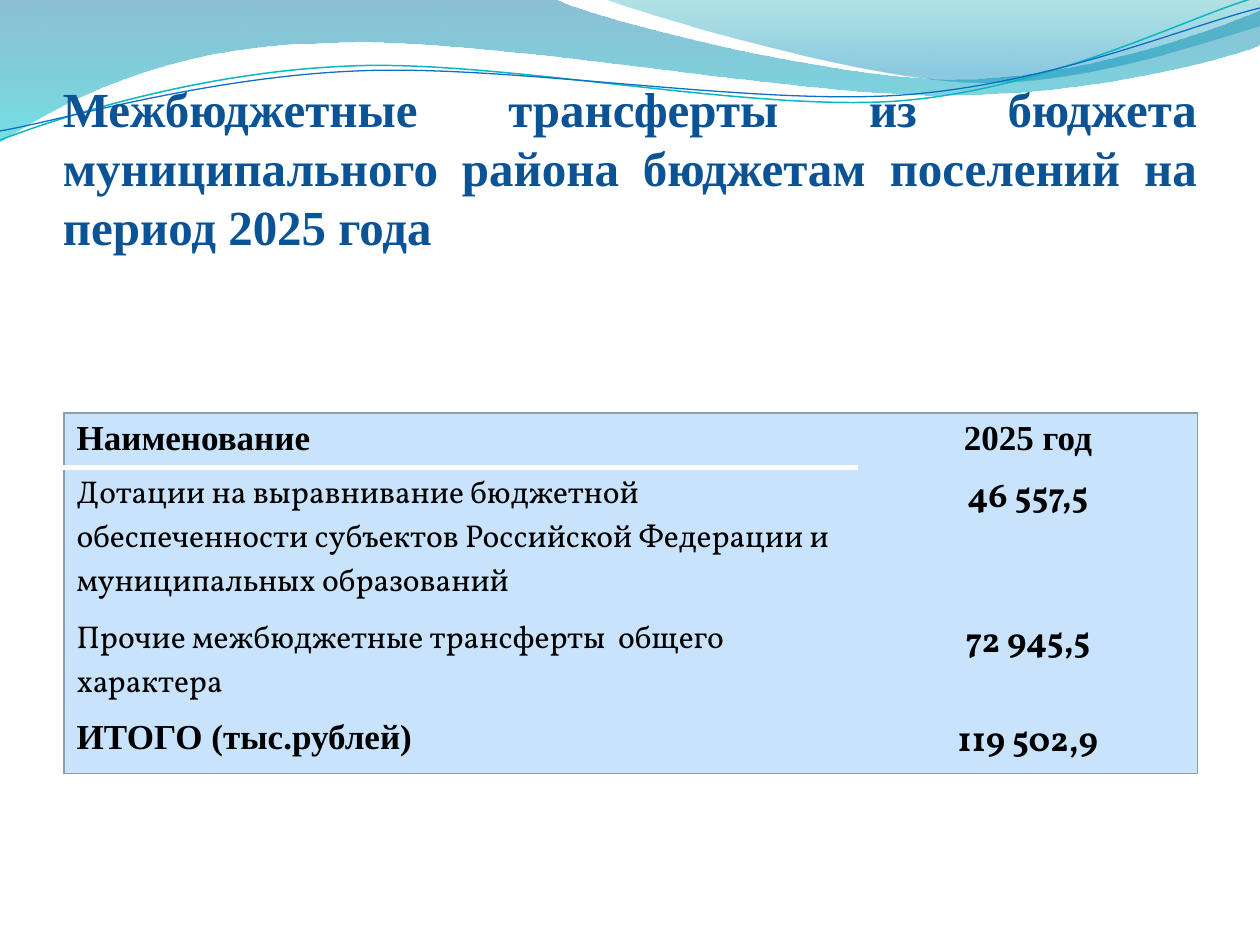
from lxml import etree
from pptx import Presentation
from pptx import util as u
from pptx.dml.color import RGBColor
from pptx.enum import text
from pptx.oxml.ns import qn

PX = 914400 // 126
NAVY = RGBColor(0x0B, 0x53, 0x94)
BLACK = RGBColor(0, 0, 0)
WHITE = RGBColor(255, 255, 255)
PALE_BLUE = RGBColor(0xC8, 0xE3, 0xFB)
GREY_BLUE = RGBColor(0x8B, 0x9E, 0xB0)
TEAL = RGBColor(0x0A, 0xB8, 0xBF)
BLUE = RGBColor(0x0F, 0x6F, 0xC6)
OCEAN = RGBColor(0, 0x74, 0xA1)
AQUA = RGBColor(0, 0xC6, 0xCF)
SEA = RGBColor(0, 0xA1, 0xA9)
SKY = RGBColor(0, 0x8B, 0xBF)
SERIF, VOLLKORN = "Times New Roman", "Vollkorn"

TITLE = "Межбюджетные трансферты из бюджета муниципального района бюджетам поселений на период 2025 года"
ROWS = [
    (51, ("Наименование", SERIF, 20, True), ("2025 год", SERIF, 20, True)),
    (145, ("Дотации на выравнивание бюджетной обеспеченности субъектов Российской Федерации и муниципальных образований",
           VOLLKORN, 18, False), ("46 557,5", VOLLKORN, 20, True)),
    (99, ("Прочие межбюджетные трансферты  общего характера", VOLLKORN, 18, False),
     ("72 945,5", VOLLKORN, 20, True)),
    (62, ("ИТОГО (тыс.рублей)", SERIF, 20, True), ("119 502,9", VOLLKORN, 20, True)),
]
COLUMNS = [794, 340]

# Each wave: start point, then segments of one point (line) or three (curve).
WAVES = [
    ((0, 0), [[(554, -1)], [(600, 21), (837, 79), (955, 79)], [(1075, 79), (1207, 33), (1260, 11)],
              [(1261, 45)], [(1239, 55), (1096, 96), (940, 95)], [(784, 95), (481, 35), (324, 43)],
              [(163, 45), (58, 105), (-1, 142)], [(0, 0)]],
     [(0, OCEAN, 45), (1, AQUA, 55)]),
    ((604, -1), [[(641, 14), (859, 78), (969, 82)], [(1079, 87), (1211, 40), (1260, 26)],
                 [(1260, 0)], [(604, -1)]],
     [(0, SEA, 30), (0.8, SKY, 45)]),
]
STRANDS = [
    ((0, 140), [[(60, 117), (199, 72), (349, 66)], [(498, 59), (747, 112), (898, 101)],
                [(1050, 89), (1182, 19), (1257, -3)]], TEAL, 0.85),
    ((0, 131), [[(59, 121), (207, 77), (357, 71)], [(508, 64), (752, 106), (903, 95)],
                [(1053, 84), (1186, 26), (1260, 8)]], BLUE, 0.75),
]


def add_curve(slide, start, segments, closed):
    builder = slide.shapes.build_freeform(*start, scale=PX)
    builder.add_line_segments([point for segment in segments for point in segment], close=closed)
    curve = builder.convert_to_shape()
    curve.shadow.inherit = False
    lines = iter(list(curve._element.iter(qn("a:lnTo"))))
    for segment in segments:
        steps = [next(lines) for _ in segment]
        if len(steps) == 3:
            bezier = etree.Element(qn("a:cubicBezTo"))
            steps[0].addprevious(bezier)
            for step in steps:
                bezier.append(step[0])
                step.getparent().remove(step)
    return curve


def add_wave(slide, start, segments, stops):
    wave = add_curve(slide, start, segments, True)
    wave.line.fill.background()
    wave.fill.gradient()
    wave.fill.gradient_angle = 270
    for stop, (position, color, _) in zip(wave.fill.gradient_stops, stops):
        stop.position = position
        stop.color.rgb = color
    tints = wave._element.spPr.iter(qn("a:srgbClr"))
    for tint, (_, _, opacity) in zip(list(tints), stops):
        etree.SubElement(tint, qn("a:alpha"), val=str(opacity * 1000))


def add_strand(slide, start, segments, color, width):
    strand = add_curve(slide, start, segments, False)
    strand.fill.background()
    strand.line.color.rgb = color
    strand.line.width = u.Pt(width)


def style_text(paragraph, font, size, bold, color, align):
    paragraph.alignment = align
    for run in paragraph.runs:
        run.font.name = font
        run.font.size = u.Pt(size)
        run.font.bold = bold
        run.font.color.rgb = color


def set_borders(cell, edges):
    properties = cell._tc.get_or_add_tcPr()
    for index, side in enumerate("LRTB"):
        border = etree.Element(qn(f"a:ln{side}"))
        if side in edges:
            color, width = edges[side]
            border.set("w", str(u.Pt(width)))
            fill = etree.SubElement(border, qn("a:solidFill"))
            etree.SubElement(fill, qn("a:srgbClr"), val=str(color))
        else:
            etree.SubElement(border, qn("a:noFill"))
        properties.insert(index, border)


def add_title(slide):
    title = slide.shapes.add_textbox(63 * PX, 97 * PX, 1134 * PX, 158 * PX)
    frame = title.text_frame
    frame.word_wrap = True
    frame.vertical_anchor = text.MSO_ANCHOR.BOTTOM
    frame.margin_left = frame.margin_right = frame.margin_bottom = 0
    frame.text = TITLE
    style_text(frame.paragraphs[0], SERIF, 28, True, NAVY, text.PP_ALIGN.JUSTIFY)


def add_transfers(slide):
    height = sum(row[0] for row in ROWS)
    transfers = slide.shapes.add_table(len(ROWS), len(COLUMNS), 64 * PX, 413 * PX,
                                       sum(COLUMNS) * PX, height * PX).table
    transfers.first_row = transfers.horz_banding = False
    for column, width in zip(transfers.columns, COLUMNS):
        column.width = width * PX
    outline, divider = (GREY_BLUE, 0.75), (WHITE, 3)
    aligns = [text.PP_ALIGN.LEFT, text.PP_ALIGN.CENTER]
    for r, (row_height, *entries) in enumerate(ROWS):
        transfers.rows[r].height = row_height * PX
        for c, (wording, font, size, bold) in enumerate(entries):
            cell = transfers.cell(r, c)
            cell.text_frame.text = wording
            style_text(cell.text_frame.paragraphs[0], font, size, bold, BLACK, aligns[c])
            cell.fill.solid()
            cell.fill.fore_color.rgb = PALE_BLUE
            edges = {"L" if c == 0 else "R": outline}
            if r == 0:
                edges["T"] = outline
            if r == len(ROWS) - 1:
                edges["B"] = outline
            if c == 0 and r < 2:
                edges["B" if r == 0 else "T"] = divider
            set_borders(cell, edges)


def main():
    deck = Presentation()
    deck.slide_width, deck.slide_height = 1260 * PX, 945 * PX
    slide = deck.slides.add_slide(deck.slide_layouts[6])
    for wave in WAVES:
        add_wave(slide, *wave)
    for strand in STRANDS:
        add_strand(slide, *strand)
    add_title(slide)
    add_transfers(slide)
    deck.save("out.pptx")


if __name__ == "__main__":
    main()
